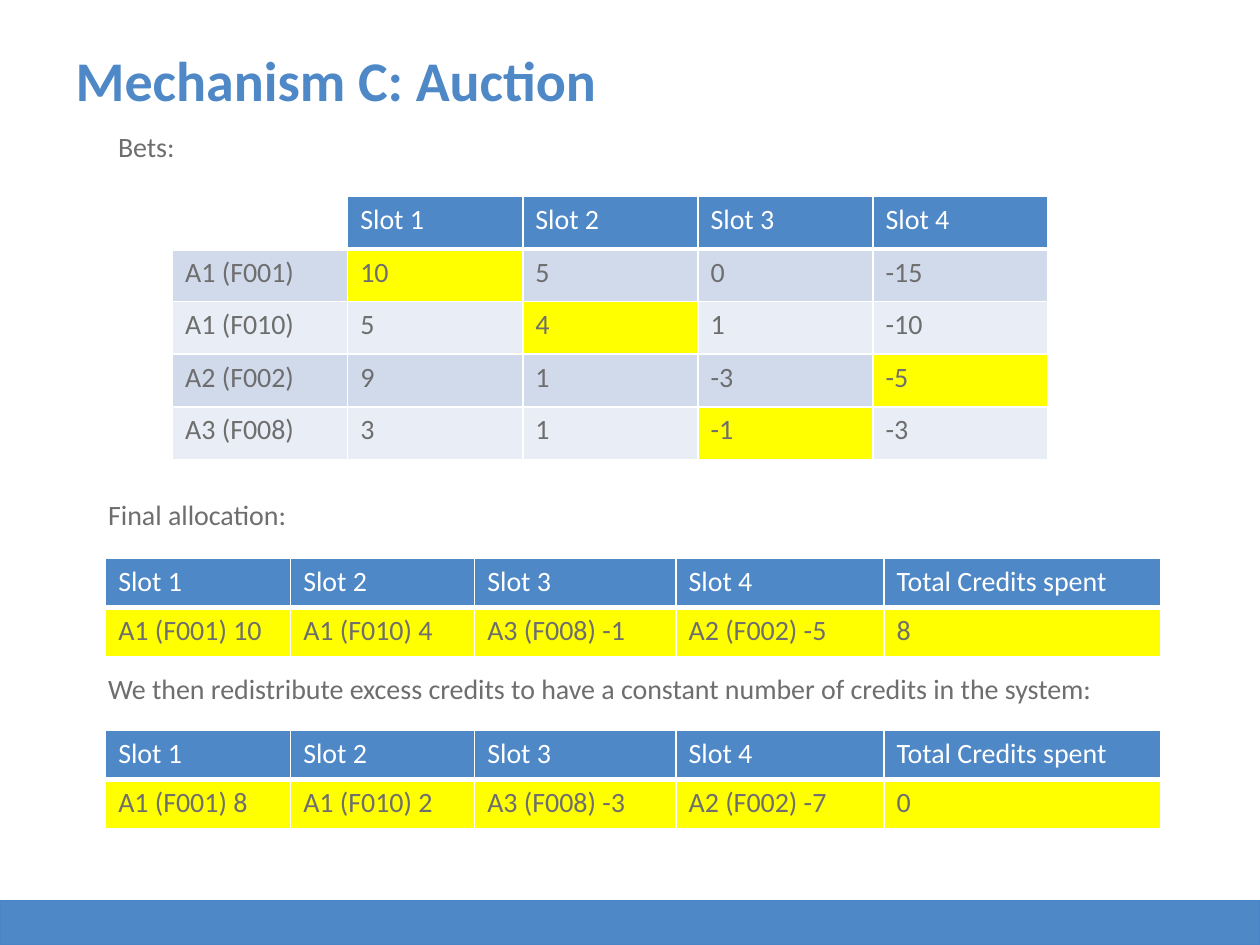
import pptx
import pptx.dml.color
import pptx.enum.shapes
import pptx.enum.text
import pptx.oxml
import pptx.oxml.ns
import pptx.util
from pptx.util import Cm

FONT = "Calibri"
BLUE, GREY, WHITE, YELLOW = "4E88C7", "6E6E6E", "FFFFFF", "FFFF00"
BAND_FILLS = ("D0DAEB", "E9EDF5")

SLOTS = ["Slot 1", "Slot 2", "Slot 3", "Slot 4"]
BETS = [
    ["", *SLOTS],
    ["A1 (F001)", "10", "5", "0", "-15"],
    ["A1 (F010)", "5", "4", "1", "-10"],
    ["A2 (F002)", "9", "1", "-3", "-5"],
    ["A3 (F008)", "3", "1", "-1", "-3"],
]
WINNING_BETS = {(1, 1), (2, 2), (3, 4), (4, 3)}
ALLOCATION_HEADER = [*SLOTS, "Total Credits spent"]
ALLOCATION_WIDTHS = [3.73, 3.71, 4.06, 4.19, 5.59]
ALLOCATIONS = [
    (11.25, ["A1 (F001) 10", "A1 (F010) 4", "A3 (F008) -1", "A2 (F002) -5", "8"]),
    (14.73, ["A1 (F001) 8", "A1 (F010) 2", "A3 (F008) -3", "A2 (F002) -7", "0"]),
]
CAPTIONS = [
    (2.13, 2.49, "Bets:"),
    (1.93, 9.91, "Final allocation:"),
    (1.93, 13.41, "We then redistribute excess credits to have a constant "
                  "number of credits in the system:"),
]


def rgb(value):
    return pptx.dml.color.RGBColor.from_string(value)


def format_text(text_frame, color, size=16, bold=False):
    for paragraph in text_frame.paragraphs:
        for run in paragraph.runs:
            run.font.name = FONT
            run.font.size = pptx.util.Pt(size)
            run.font.bold = bold
            run.font.color.rgb = rgb(color)


def add_title(slide, text):
    title = slide.shapes.title
    title.left, title.top, title.width, title.height = Cm(1.27), Cm(0.79), Cm(17.53), Cm(3.18)
    title.text_frame.text = text
    title.text_frame.vertical_anchor = pptx.enum.text.MSO_ANCHOR.TOP
    title.text_frame.paragraphs[0].alignment = pptx.enum.text.PP_ALIGN.LEFT
    format_text(title.text_frame, BLUE, 32, True)


def add_footer_band(slide):
    band = slide.shapes.add_shape(
        pptx.enum.shapes.MSO_SHAPE.RECTANGLE, Cm(0), Cm(18.16), Cm(25.4), Cm(0.89))
    band.shadow.inherit = False
    band.fill.solid()
    band.fill.fore_color.rgb = rgb(BLUE)
    band.line.color.rgb = rgb("4985C6")
    band.line.width = pptx.util.Pt(0.75)


def add_caption(slide, left, top, text):
    caption = slide.shapes.add_textbox(Cm(left), Cm(top), Cm(22.2), Cm(0.94))
    caption.text_frame.word_wrap = True
    caption.text_frame.text = text
    format_text(caption.text_frame, GREY)


def set_borders(cell, bottom_width):
    """Draw white cell borders, 1 pt except at the bottom."""
    properties = cell._tc.get_or_add_tcPr()
    for side, width in (("L", 1), ("R", 1), ("T", 1), ("B", bottom_width)):
        properties.append(pptx.oxml.parse_xml(
            f'<a:ln{side} {pptx.oxml.ns.nsdecls("a")} w="{pptx.util.Pt(width)}">'
            f'<a:solidFill><a:srgbClr val="{WHITE}"/></a:solidFill></a:ln{side}>'))


def add_grid(slide, left, top, widths, row_height, rows, highlights):
    """Add a table with a blue header, banded rows and highlighted (row, column) cells."""
    table = slide.shapes.add_table(
        len(rows), len(widths), Cm(left), Cm(top),
        Cm(sum(widths)), Cm(row_height * len(rows))).table
    for column, width in zip(table.columns, widths):
        column.width = Cm(width)
    for row_index, values in enumerate(rows):
        table.rows[row_index].height = Cm(row_height)
        is_header = row_index == 0
        for column_index, value in enumerate(values):
            cell = table.cell(row_index, column_index)
            cell.text_frame.text = value
            format_text(cell.text_frame, WHITE if is_header else GREY)
            if is_header:
                fill = BLUE if value else WHITE
            elif (row_index, column_index) in highlights:
                fill = YELLOW
            else:
                fill = BAND_FILLS[(row_index - 1) % 2]
            set_borders(cell, 3 if is_header else 1)
            cell.fill.solid()
            cell.fill.fore_color.rgb = rgb(fill)


def main():
    presentation = pptx.Presentation()
    presentation.slide_width, presentation.slide_height = Cm(25.4), Cm(19.05)
    slide = presentation.slides.add_slide(presentation.slide_layouts[5])
    add_footer_band(slide)
    add_title(slide, "Mechanism C: Auction")
    for left, top, text in CAPTIONS:
        add_caption(slide, left, top, text)
    add_grid(slide, 3.48, 3.96, [3.53] * 5, 1.06, BETS, WINNING_BETS)
    allocation_cells = {(1, column) for column in range(len(ALLOCATION_HEADER))}
    for top, allocation in ALLOCATIONS:
        add_grid(slide, 2.13, top, ALLOCATION_WIDTHS, 0.99,
                 [ALLOCATION_HEADER, allocation], allocation_cells)
    presentation.save("out.pptx")


if __name__ == "__main__":
    main()
